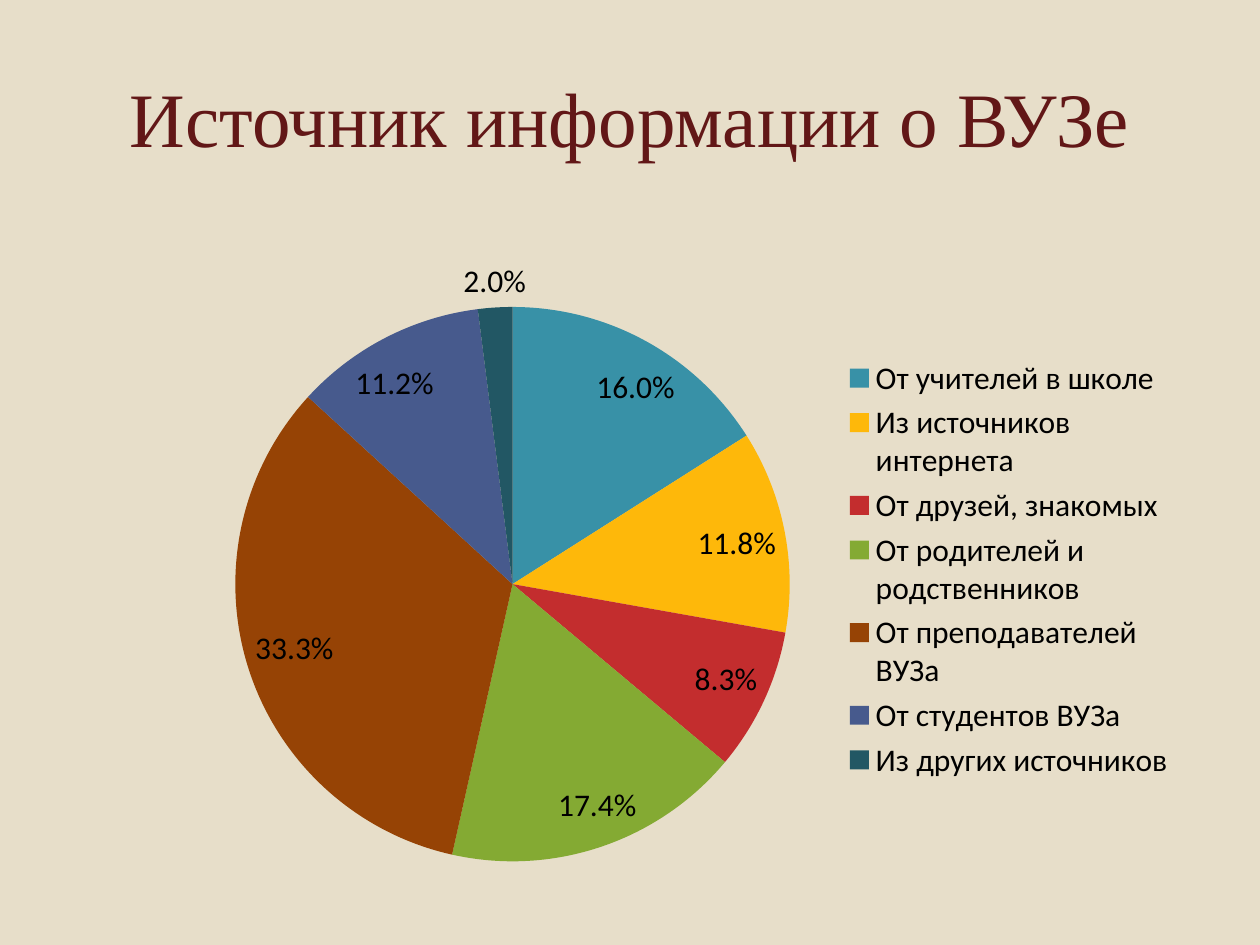
from dataclasses import dataclass

import pptx
import pptx.chart.data
import pptx.dml.color
import pptx.enum.chart
import pptx.enum.text
import pptx.oxml
import pptx.oxml.ns
import pptx.util

Pt = pptx.util.Pt


@dataclass(frozen=True)
class Theme:
    background: str = "E7DEC9"
    title_color: str = "621717"
    chart_text: str = "000000"
    title_font: str = "Times New Roman"
    chart_font: str = "Calibri"
    title_size: int = 44
    chart_size: int = 18


THEME = Theme()

# Category, percentage and slice colour
SOURCES = [
    ("От учителей в школе", 16, "3891A7"),
    ("Из источников интернета", 11.8, "FEB80A"),
    ("От друзей, знакомых ", 8.3, "C32D2E"),
    ("От родителей и родственников", 17.4, "84AA33"),
    ("От преподавателей ВУЗа", 33.3, "964305"),
    ("От студентов ВУЗа", 11.2, "475A8D"),
    ("Из других источников", 2, "225764"),
]


def rgb(value):
    return pptx.dml.color.RGBColor.from_string(value)


def apply_format(target, values):
    for name, value in values.items():
        setattr(target, name, value)


def format_font(font, name, size, color):
    apply_format(font, {"name": name, "size": Pt(size)})
    font.color.rgb = rgb(color)


def fill_solid(fill, color):
    fill.solid()
    fill.fore_color.rgb = rgb(color)


def add_title(slide, text, left, top, width, height):
    shape = slide.shapes.add_textbox(Pt(left), Pt(top), Pt(width), Pt(height))
    apply_format(shape.text_frame, {
        "word_wrap": True,
        "vertical_anchor": pptx.enum.text.MSO_ANCHOR.MIDDLE,
    })
    paragraph = shape.text_frame.paragraphs[0]
    apply_format(paragraph, {
        "text": text,
        "alignment": pptx.enum.text.PP_ALIGN.CENTER,
    })
    format_font(paragraph.runs[0].font, THEME.title_font,
                THEME.title_size, THEME.title_color)


def set_layout(element, index, fractions, inner=False):
    """Place a chart part by fractions of the chart area."""
    for old in element.findall(pptx.oxml.ns.qn("c:layout")):
        element.remove(old)
    target = '<c:layoutTarget val="inner"/>' if inner else ""
    modes = '<c:xMode val="edge"/><c:yMode val="edge"/>'
    places = "".join(f'<c:{name} val="{value}"/>'
                     for name, value in zip("xywh", fractions))
    element.insert(index, pptx.oxml.parse_xml(
        f'<c:layout {pptx.oxml.ns.nsdecls("c")}><c:manualLayout>'
        f'{target}{modes}{places}</c:manualLayout></c:layout>'))


def add_pie(slide, sources, left, top, width, height):
    names, values, colors = zip(*sources)
    data = pptx.chart.data.CategoryChartData()
    data.categories = names
    data.add_series("Series 1", values)
    chart = slide.shapes.add_chart(
        pptx.enum.chart.XL_CHART_TYPE.PIE,
        Pt(left), Pt(top), Pt(width), Pt(height), data).chart
    apply_format(chart, {"has_title": False, "has_legend": True})
    plot = chart.plots[0]
    apply_format(plot, {"vary_by_categories": True, "has_data_labels": True})

    # Slices
    for index, color in enumerate(colors):
        fill_solid(plot.series[0].points[index].format.fill, color)

    # Labels and legend
    apply_format(plot.data_labels, {
        "show_percentage": True,
        "show_value": False,
        "number_format": "0.0%",
        "number_format_is_linked": False,
        "position": pptx.enum.chart.XL_LABEL_POSITION.BEST_FIT,
    })
    apply_format(chart.legend, {
        "position": pptx.enum.chart.XL_LEGEND_POSITION.RIGHT,
        "include_in_layout": False,
    })
    for part in (chart, plot.data_labels, chart.legend):
        format_font(part.font, THEME.chart_font, THEME.chart_size,
                    THEME.chart_text)

    # Places of the pie and the legend
    set_layout(chart.element.xpath("//c:plotArea")[0], 0,
               (0.03, 0.16, 0.57, 0.73), inner=True)
    set_layout(chart.element.xpath("//c:legend")[0], 1,
               (0.65, 0.22, 0.34, 0.57))


def main():
    presentation = pptx.Presentation()
    apply_format(presentation, {"slide_width": Pt(720),
                                "slide_height": Pt(540)})
    slide = presentation.slides.add_slide(presentation.slide_layouts[6])
    fill_solid(slide.background.fill, THEME.background)
    add_title(slide, "Источник информации о ВУЗе", 36, 21.6, 648, 90)
    add_pie(slide, SOURCES, 116, 106, 561.6, 434)
    presentation.save("out.pptx")


if __name__ == "__main__":
    main()
